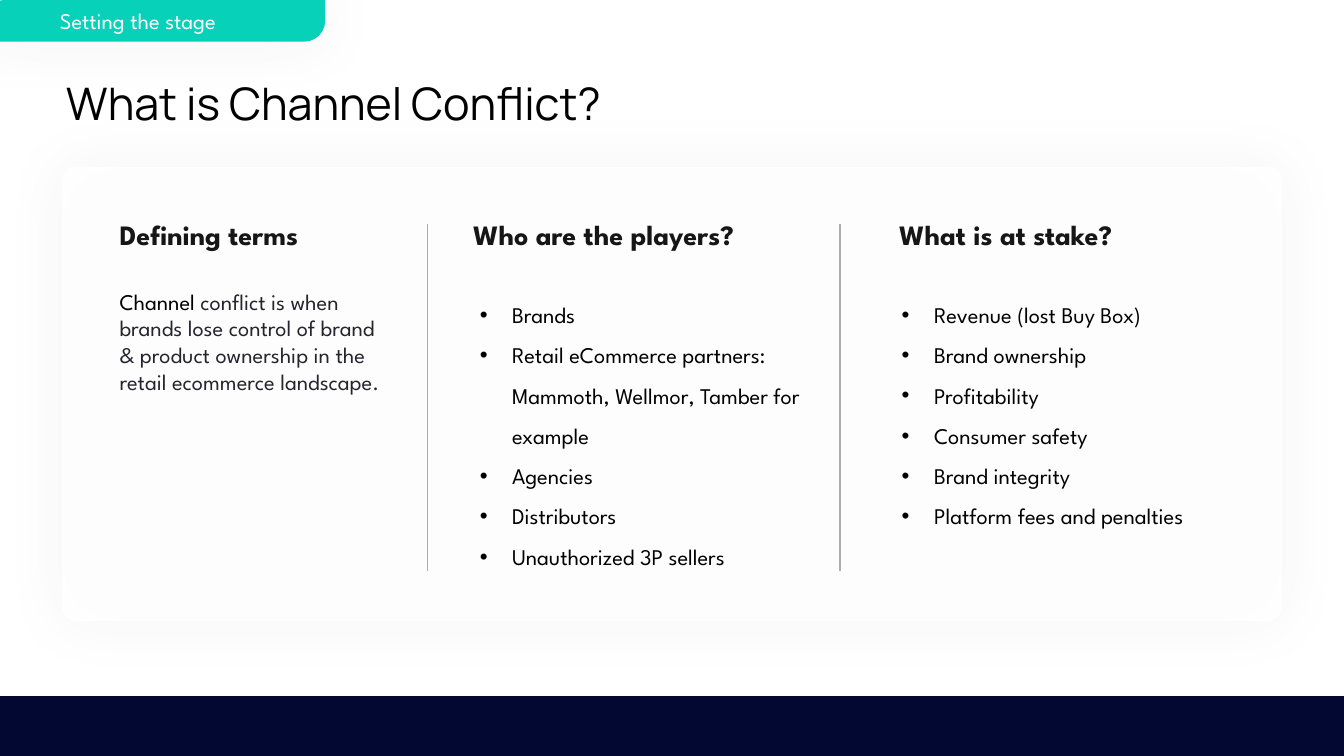
from dataclasses import dataclass

from lxml.etree import SubElement
from pptx import Presentation
from pptx.dml.color import RGBColor
from pptx.enum.shapes import MSO_CONNECTOR, MSO_SHAPE
from pptx.enum.text import MSO_ANCHOR, MSO_AUTO_SIZE, PP_ALIGN
from pptx.oxml.ns import qn
from pptx.util import Inches, Pt


@dataclass(frozen=True)
class Theme:
    white: str = "FFFFFF"
    black: str = "000000"
    head: str = "161616"
    body: str = "26242D"
    rule: str = "AEABAB"
    teal: str = "07D1B8"
    navy: str = "030832"
    shade: str = "3F3F3F"
    title_font: str = "Manrope"
    text_font: str = "League Spartan"
    mark_font: str = "Arial"
    title_size: int = 24
    head_size: int = 15
    text_size: int = 12


THEME = Theme()
PAD = (0.06, 0, 0.06, 0)
TOP = 1.67
LIST_TOP = 2.14

PLAYERS = [
    "Brands",
    "Retail eCommerce partners: Mammoth, Wellmor, Tamber for example",
    "Agencies",
    "Distributors",
    "Unauthorized 3P sellers",
]
STAKES = [
    "Revenue (lost Buy Box)",
    "Brand ownership",
    "Profitability",
    "Consumer safety",
    "Brand integrity",
    "Platform fees and penalties",
]


def add_bullet(para, indent=0.24):
    props = para._p.get_or_add_pPr()
    props.set("marL", str(Inches(indent)))
    props.set("indent", str(-Inches(indent)))
    color = SubElement(props, qn("a:buClr"))
    SubElement(color, qn("a:srgbClr"), val=THEME.black)
    SubElement(props, qn("a:buFont"), typeface=THEME.mark_font)
    SubElement(props, qn("a:buChar"), char="•")


def write(frame, lines, *, size=THEME.text_size, font=THEME.text_font,
          color=THEME.black, bold=False, spacing=1.0, bullet=False,
          pad=PAD, anchor=MSO_ANCHOR.TOP):
    """Fill a frame; a line is a string or a list of (text, color) runs."""
    frame.word_wrap = True
    frame.auto_size = MSO_AUTO_SIZE.NONE
    frame.vertical_anchor = anchor
    (frame.margin_left, frame.margin_top,
     frame.margin_right, frame.margin_bottom) = map(Inches, pad)
    for index, line in enumerate(lines):
        para = frame.add_paragraph() if index else frame.paragraphs[0]
        para.alignment = PP_ALIGN.LEFT
        para.line_spacing = spacing
        if bullet:
            add_bullet(para)
        for text, tint in [(line, color)] if isinstance(line, str) else line:
            run = para.add_run()
            run.text = text
            run.font.size = Pt(size)
            run.font.name = font
            run.font.bold = bold
            run.font.color.rgb = RGBColor.from_string(tint)


def add_text(slide, box, lines, **style):
    shape = slide.shapes.add_textbox(*map(Inches, box))
    write(shape.text_frame, lines, **style)


def add_panel(slide, kind, box, color, adjust=()):
    shape = slide.shapes.add_shape(kind, *map(Inches, box))
    shape.shadow.inherit = False
    shape.fill.solid()
    shape.fill.fore_color.rgb = RGBColor.from_string(color)
    shape.line.fill.background()
    for index, value in enumerate(adjust):
        shape.adjustments[index] = value
    return shape


def set_alpha(color, percent):
    SubElement(color, qn("a:alpha"), val=str(percent * 1000))


def add_glow(shape):
    """Give the shape a wide, faint shadow on all sides."""
    effects = shape._element.spPr.find(qn("a:effectLst"))
    shadow = SubElement(effects, qn("a:outerShdw"), blurRad=str(Pt(34)),
                        dist="0", dir="0", algn="ctr", rotWithShape="0")
    set_alpha(SubElement(shadow, qn("a:srgbClr"), val=THEME.shade), 6)


def add_rule(slide, left, top=TOP, bottom=4.25):
    line = slide.shapes.add_connector(
        MSO_CONNECTOR.STRAIGHT, *map(Inches, (left, top, left, bottom)))
    line.line.color.rgb = RGBColor.from_string(THEME.rule)
    line.line.width = Pt(0.75)
    SubElement(line._element.spPr, qn("a:effectLst"))


def add_title(slide, text):
    title = slide.shapes.title
    title.left, title.top, title.width, title.height = map(
        Inches, (0.39, 0.4, 6.85, 0.47))
    write(title.text_frame, [text], size=THEME.title_size,
          font=THEME.title_font, spacing=1.15, pad=(0.1,) * 4)


def add_card(slide):
    card = add_panel(slide, MSO_SHAPE.ROUNDED_RECTANGLE,
                     (0.46, 1.24, 9.08, 3.38), THEME.white, [0.03])
    set_alpha(card._element.spPr.find(".//" + qn("a:srgbClr")), 82)
    add_glow(card)


def add_tab(slide, text):
    tab = add_panel(slide, MSO_SHAPE.ROUND_2_DIAG_RECTANGLE,
                    (-0.12, 0, 2.54, 0.31), THEME.teal, [0.5, 0])
    add_glow(tab)
    write(tab.text_frame, [text], color=THEME.white,
          pad=(0.52, 0.04, 0.45, 0.04), anchor=MSO_ANCHOR.MIDDLE)


def main():
    deck = Presentation()
    deck.slide_width = Inches(10)
    deck.slide_height = deck.slide_width * 9 // 16
    slide = deck.slides.add_slide(deck.slide_layouts[5])

    add_panel(slide, MSO_SHAPE.RECTANGLE, (0, 5.18, 10, 0.45), THEME.navy)
    add_title(slide, "What is Channel Conflict?")
    add_card(slide)
    for left in (3.18, 6.25):
        add_rule(slide, left)

    heads = {0.83: "Defining terms", 3.46: "Who are the players?",
             6.63: "What is at stake?"}
    for left, text in heads.items():
        add_text(slide, (left, TOP, 2.25, 0.21), [text], bold=True,
                 size=THEME.head_size, color=THEME.head, spacing=0.8)

    meaning = [("Channel", THEME.black),
               (" conflict is when brands lose control of brand & product "
                "ownership in the retail ecommerce landscape.", THEME.body)]
    add_text(slide, (0.83, LIST_TOP, 2.15, 1.09), [meaning])
    for left, width, height, items in ((3.51, 2.85, 1.66, PLAYERS),
                                       (6.65, 2.56, 1.57, STAKES)):
        add_text(slide, (left, LIST_TOP, width, height), items,
                 spacing=1.5, bullet=True)
    add_tab(slide, "Setting the stage")

    deck.save("out.pptx")


if __name__ == "__main__":
    main()
